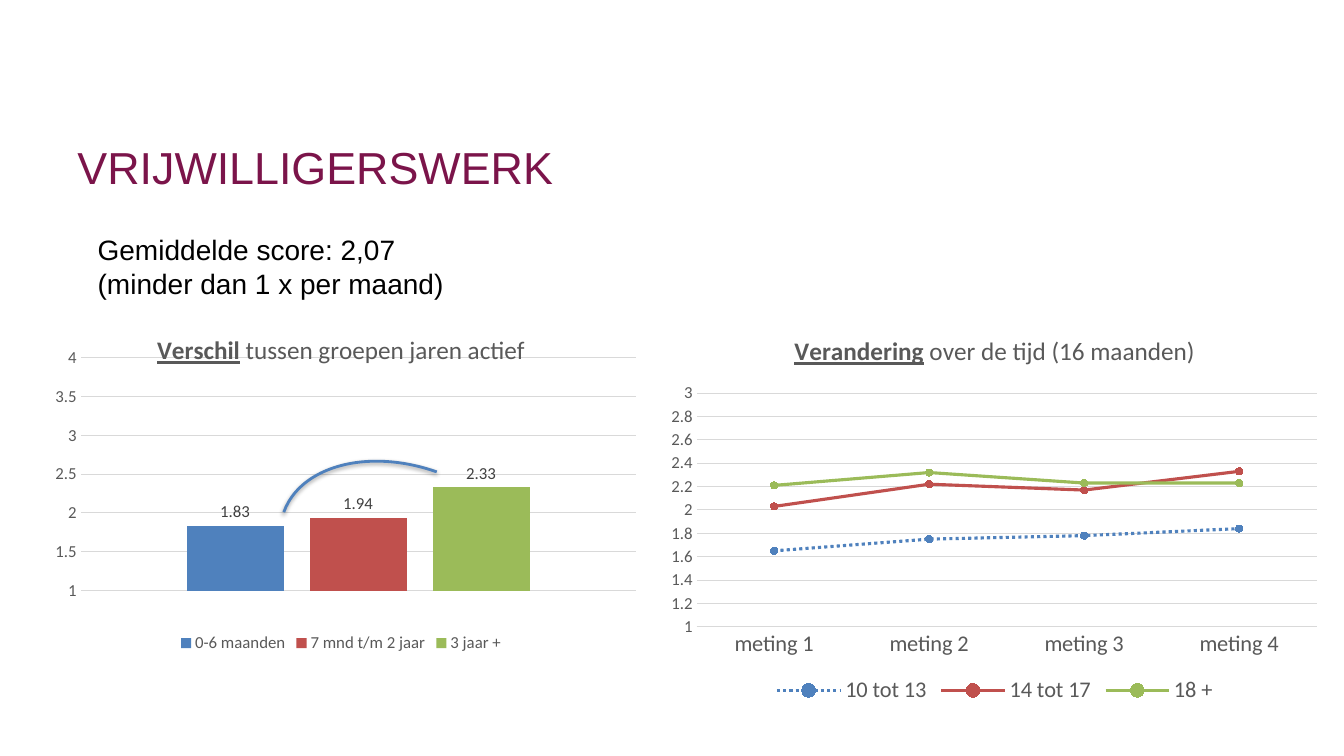
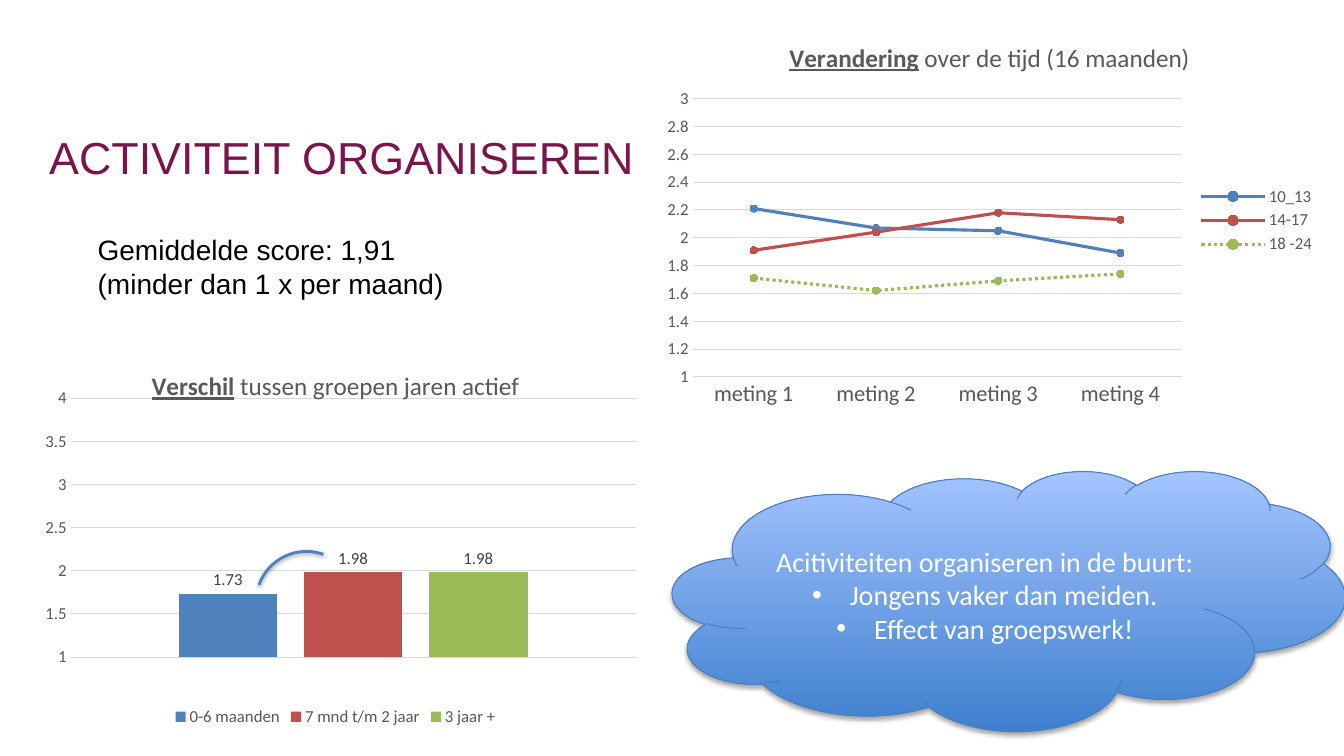
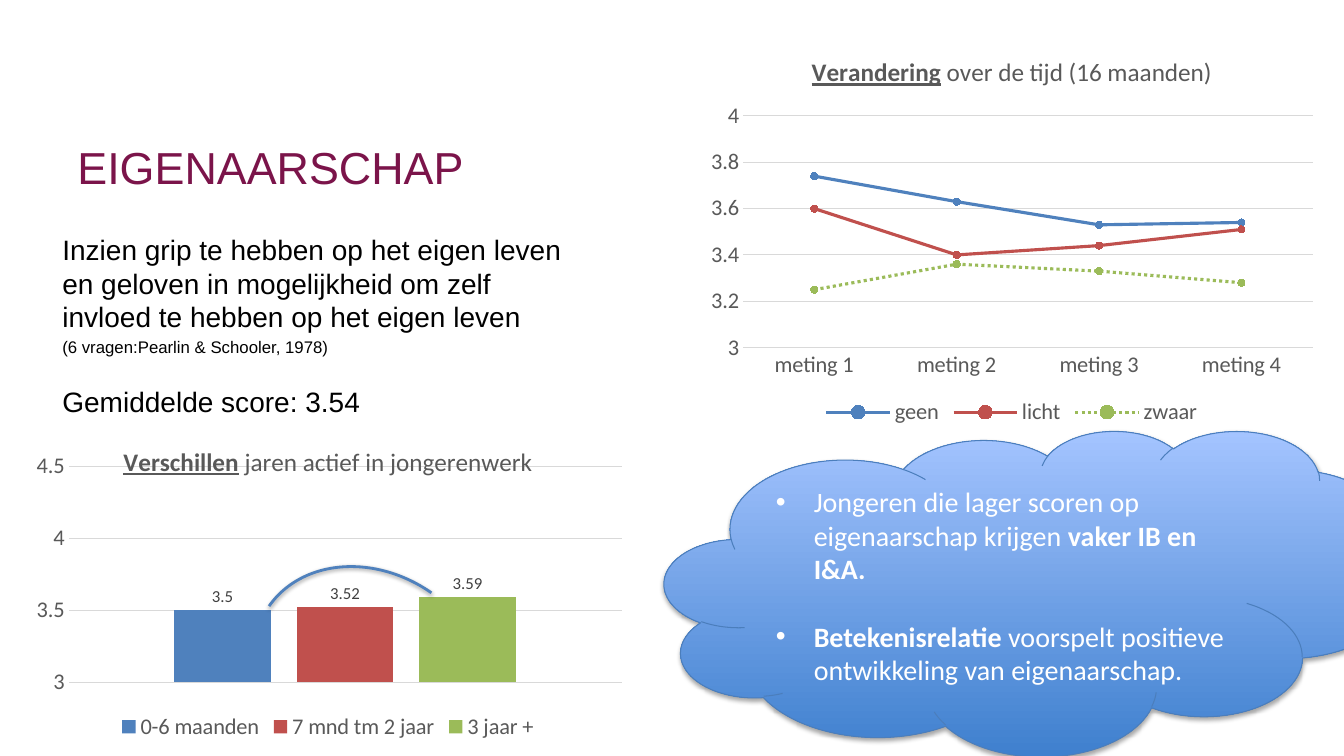
from dataclasses import dataclass

from lxml.etree import SubElement
from pptx import Presentation
from pptx.chart.data import CategoryChartData
from pptx.dml.color import RGBColor
from pptx.enum.chart import (XL_CHART_TYPE, XL_LABEL_POSITION, XL_LEGEND_POSITION,
                             XL_MARKER_STYLE, XL_TICK_MARK)
from pptx.enum.dml import MSO_LINE
from pptx.enum.shapes import MSO_SHAPE
from pptx.enum.text import MSO_ANCHOR, PP_ALIGN
from pptx.oxml.ns import qn
from pptx.util import Pt


@dataclass(frozen=True)
class Theme:
    title_font: str = "Arial"
    chart_font: str = "Calibri"
    purple: str = "7B144A"
    black: str = "000000"
    white: str = "FFFFFF"
    grey: str = "595959"
    label: str = "404040"
    grid: str = "D9D9D9"
    blue: str = "4F81BD"
    series: tuple = ("4F81BD", "C0504D", "9BBB59")
    cloud_dark: str = "3F80CE"
    cloud_light: str = "A4C4FF"
    cloud_line: str = "4B7EBC"
    title_size: int = 32
    body_size: int = 20
    chart_title_size: int = 18
    large: int = 16
    small: int = 12


THEME = Theme()
PX = 9144
PAGE_SIZE = (1333, 750)
MEASURES = ["meting 1", "meting 2", "meting 3", "meting 4"]
OVER_TIME = ("Verandering", " over de tijd (16 maanden)")
BY_YEARS = ("Verschil", " tussen groepen jaren actief")
BOTTOM, RIGHT = XL_LEGEND_POSITION.BOTTOM, XL_LEGEND_POSITION.RIGHT

SLIDES = [
    {
        "title": ("VRIJWILLIGERSWERK", (67, 103, 1200, 125)),
        "body": ((87, 226, 393, 125), [
            ("Gemiddelde score: 2,07 (minder dan 1 x per maand)", THEME.body_size, 0)]),
        "bars": {
            "title": BY_YEARS, "frame": (46, 316, 585, 336), "plot": (80, 355, 551, 231),
            "scale": (1, 4, 0.5), "size": THEME.small,
            "series": [("0-6 maanden", 1.83), ("7 mnd t/m 2 jaar", 1.94), ("3 jaar +", 2.33)]},
        "lines": {
            "title": OVER_TIME, "frame": (653, 316, 667, 387), "plot": (691, 390, 615, 232),
            "scale": (1, 3, 0.2), "size": THEME.small,
            "legend": (BOTTOM, THEME.large), "dotted": "10 tot 13",
            "series": [("10 tot 13", (1.65, 1.75, 1.78, 1.84)),
                       ("14 tot 17", (2.03, 2.22, 2.17, 2.33)),
                       ("18 +", (2.21, 2.32, 2.23, 2.23))]},
        "arc": ((315, 422, 177, 259), 289.6),
    },
    {
        "title": ("ACTIVITEIT ORGANISEREN", (39, 93, 1200, 125)),
        "body": ((87, 226, 393, 125), [
            ("Gemiddelde score: 1,91 (minder dan 1 x per maand)", THEME.body_size, 0)]),
        "bars": {
            "title": BY_YEARS, "frame": (35, 351, 596, 374), "plot": (70, 395, 561, 257),
            "scale": (1, 4, 0.5), "size": THEME.small,
            "series": [("0-6 maanden", 1.73), ("7 mnd t/m 2 jaar", 1.98), ("3 jaar +", 1.98)]},
        "lines": {
            "title": OVER_TIME, "frame": (648, 25, 667, 387), "plot": (687, 98, 485, 276),
            "scale": (1, 3, 0.2), "size": THEME.small,
            "legend": (RIGHT, THEME.small), "dotted": "18 -24",
            "series": [("10_13", (2.21, 2.07, 2.05, 1.89)),
                       ("14-17", (1.91, 2.04, 2.18, 2.13)),
                       ("18 -24", (1.71, 1.62, 1.69, 1.74))]},
        "arc": ((254, 547, 100, 100), 289.6),
        "cloud": {
            "frame": (667, 467, 667, 258), "align": PP_ALIGN.CENTER, "gap": 0,
            "paragraphs": [
                (False, [("Acitiviteiten organiseren in de buurt:", False)]),
                (True, [("Jongens vaker dan meiden.", False)]),
                (True, [("Effect van groepswerk!", False)])]},
    },
    {
        "title": ("EIGENAARSCHAP", (67, 103, 1200, 125)),
        "body": ((52, 226, 536, 149), [
            ("Inzien grip te hebben op het eigen leven en geloven in mogelijkheid "
             "om zelf invloed te hebben op het eigen leven", THEME.body_size, 0),
            ("(6 vragen:Pearlin & Schooler, 1978)", THEME.small, 2),
            ("Gemiddelde score: 3.54", THEME.body_size, 20)]),
        "bars": {
            "title": ("Verschillen", " jaren actief in jongerenwerk"),
            "frame": (34, 427, 583, 312), "plot": (68, 463, 549, 214),
            "scale": (3, 4.5, 0.5), "size": THEME.large,
            "series": [("0-6 maanden", 3.5), ("7 mnd tm 2 jaar", 3.52), ("3 jaar +", 3.59)]},
        "lines": {
            "title": OVER_TIME, "frame": (692, 39, 623, 388), "plot": (737, 115, 565, 230),
            "scale": (3, 4, 0.2), "size": THEME.large,
            "legend": (BOTTOM, THEME.large), "dotted": "zwaar",
            "series": [("geen", (3.74, 3.63, 3.53, 3.54)),
                       ("licht", (3.6, 3.4, 3.44, 3.51)),
                       ("zwaar", (3.25, 3.36, 3.33, 3.28))]},
        "arc": ((266, 548, 206, 249), 304.9),
        "cloud": {
            "frame": (659, 427, 731, 323), "align": PP_ALIGN.LEFT, "gap": 24,
            "paragraphs": [
                (True, [("Jongeren die lager scoren op eigenaarschap krijgen ", False),
                        ("vaker IB en I&A.", True)]),
                (True, [("Betekenisrelatie ", True),
                        ("voorspelt positieve ontwikkeling van eigenaarschap.", False)])]},
    },
]


def emu(frame):
    return [length * PX for length in frame]


def rgb(value):
    return RGBColor.from_string(value)


def style_font(font, name, size, color, bold=False):
    font.name, font.size, font.bold = name, Pt(size), bold
    font.color.rgb = rgb(color)


def style_line(line, color, width):
    line.color.rgb = rgb(color)
    line.width = Pt(width)


def add_text(page, frame, paragraphs, color, anchor=MSO_ANCHOR.TOP):
    text_frame = page.shapes.add_textbox(*emu(frame)).text_frame
    text_frame.word_wrap = True
    text_frame.vertical_anchor = anchor
    text_frame.text = "\n".join(text for text, _, _ in paragraphs)
    for paragraph, (_, size, before) in zip(text_frame.paragraphs, paragraphs):
        if before:
            paragraph.space_before = Pt(before)
        style_font(paragraph.runs[0].font, THEME.title_font, size, color)


def add_shadow(shape, distance, opacity):
    shape.shadow.inherit = False
    effects = shape.element.spPr.find(qn("a:effectLst"))
    shadow = SubElement(effects, qn("a:outerShdw"), blurRad="40000", dist=str(distance),
                        dir="5400000", rotWithShape="0")
    color = SubElement(shadow, qn("a:srgbClr"), val=THEME.black)
    SubElement(color, qn("a:alpha"), val=str(opacity * 1000))


def add_arc(page, frame, rotation):
    arc = page.shapes.add_shape(MSO_SHAPE.ARC, *emu(frame))
    arc.rotation = rotation
    arc.fill.background()
    style_line(arc.line, THEME.blue, 2)
    add_shadow(arc, 20000, 38)


def add_bullet(paragraph):
    properties = paragraph._p.get_or_add_pPr()
    properties.set("marL", "342900")
    properties.set("indent", "-342900")
    SubElement(properties, qn("a:buFont"), typeface="Arial")
    SubElement(properties, qn("a:buChar"), char="•")


def add_cloud(page, cloud):
    shape = page.shapes.add_shape(MSO_SHAPE.CLOUD, *emu(cloud["frame"]))
    shape.fill.gradient()
    shape.fill.gradient_angle = 90
    for stop, color in zip(shape.fill.gradient_stops, (THEME.cloud_dark, THEME.cloud_light)):
        stop.color.rgb = rgb(color)
    style_line(shape.line, THEME.cloud_line, 0.75)
    add_shadow(shape, 23000, 35)
    text_frame = shape.text_frame
    text_frame.vertical_anchor = MSO_ANCHOR.MIDDLE
    for index, (bulleted, spans) in enumerate(cloud["paragraphs"]):
        paragraph = text_frame.add_paragraph() if index else text_frame.paragraphs[0]
        paragraph.alignment = cloud["align"]
        if index and cloud["gap"]:
            paragraph.space_before = Pt(cloud["gap"])
        if bulleted:
            add_bullet(paragraph)
        for text, bold in spans:
            span = paragraph.add_run()
            span.text = text
            style_font(span.font, THEME.chart_font, THEME.body_size, THEME.white, bold)


def place_plot(chart, frame, plot):
    area = chart.element.find(".//" + qn("c:plotArea"))
    for layout in area.findall(qn("c:layout")):
        area.remove(layout)
    layout = SubElement(area, qn("c:layout"))
    area.insert(0, layout)
    manual = SubElement(layout, qn("c:manualLayout"))
    left, top, width, height = frame
    settings = {
        "layoutTarget": "inner", "xMode": "edge", "yMode": "edge",
        "x": (plot[0] - left) / width, "y": (plot[1] - top) / height,
        "w": plot[2] / width, "h": plot[3] / height}
    for name, value in settings.items():
        SubElement(manual, qn("c:" + name), val=str(value))


def add_chart(page, kind, details, categories, series, legend):
    data = CategoryChartData()
    data.categories = categories
    for name, values in series:
        data.add_series(name, values)
    chart = page.shapes.add_chart(kind, *emu(details["frame"]), data).chart
    style_font(chart.font, THEME.chart_font, 10, THEME.black)
    chart.has_title = True
    heading = chart.chart_title.text_frame.paragraphs[0]
    for text, strong in zip(details["title"], (True, False)):
        span = heading.add_run()
        span.text = text
        style_font(span.font, THEME.chart_font, THEME.chart_title_size, THEME.grey, strong)
        span.font.underline = strong
    chart.has_legend = True
    chart.legend.position, legend_size = legend
    chart.legend.include_in_layout = False
    style_font(chart.legend.font, THEME.chart_font, legend_size, THEME.grey)
    axis = chart.value_axis
    axis.minimum_scale, axis.maximum_scale, axis.major_unit = details["scale"]
    axis.major_tick_mark = axis.minor_tick_mark = XL_TICK_MARK.NONE
    axis.format.line.fill.background()
    style_line(axis.major_gridlines.format.line, THEME.grid, 0.75)
    style_font(axis.tick_labels.font, THEME.chart_font, details["size"], THEME.grey)
    chart.plots[0].vary_by_categories = False
    place_plot(chart, details["frame"], details["plot"])
    return chart


def add_bars(page, details):
    series = [(name, [value]) for name, value in details["series"]]
    chart = add_chart(page, XL_CHART_TYPE.COLUMN_CLUSTERED, details, ["1"], series,
                      (BOTTOM, details["size"]))
    chart.category_axis.visible = False
    plot = chart.plots[0]
    plot.gap_width, plot.overlap = 219, -27
    for bar, color in zip(plot.series, THEME.series):
        bar.format.fill.solid()
        bar.format.fill.fore_color.rgb = rgb(color)
        labels = bar.data_labels
        labels.show_value = True
        labels.position = XL_LABEL_POSITION.OUTSIDE_END
        style_font(labels.font, THEME.chart_font, THEME.small, THEME.label)


def add_lines(page, details):
    chart = add_chart(page, XL_CHART_TYPE.LINE_MARKERS, details, MEASURES,
                      details["series"], details["legend"])
    axis = chart.category_axis
    axis.major_tick_mark = axis.minor_tick_mark = XL_TICK_MARK.NONE
    style_line(axis.format.line, THEME.grid, 0.75)
    style_font(axis.tick_labels.font, THEME.chart_font, THEME.large, THEME.grey)
    for series, color in zip(chart.plots[0].series, THEME.series):
        series.smooth = False
        style_line(series.format.line, color, 2.25)
        if series.name == details["dotted"]:
            series.format.line.dash_style = MSO_LINE.ROUND_DOT
        marker = series.marker
        marker.style, marker.size = XL_MARKER_STYLE.CIRCLE, 5
        marker.format.fill.solid()
        marker.format.fill.fore_color.rgb = rgb(color)
        style_line(marker.format.line, color, 0.75)


def build_slide(deck, content):
    page = deck.slides.add_slide(deck.slide_layouts[6])
    title, frame = content["title"]
    add_text(page, frame, [(title, THEME.title_size, 0)], THEME.purple, MSO_ANCHOR.MIDDLE)
    add_bars(page, content["bars"])
    add_text(page, *content["body"], THEME.black)
    add_lines(page, content["lines"])
    if "cloud" in content:
        add_cloud(page, content["cloud"])
    add_arc(page, *content["arc"])


def main():
    deck = Presentation()
    deck.slide_width, deck.slide_height = emu(PAGE_SIZE)
    for content in SLIDES:
        build_slide(deck, content)
    deck.save("out.pptx")


if __name__ == "__main__":
    main()
